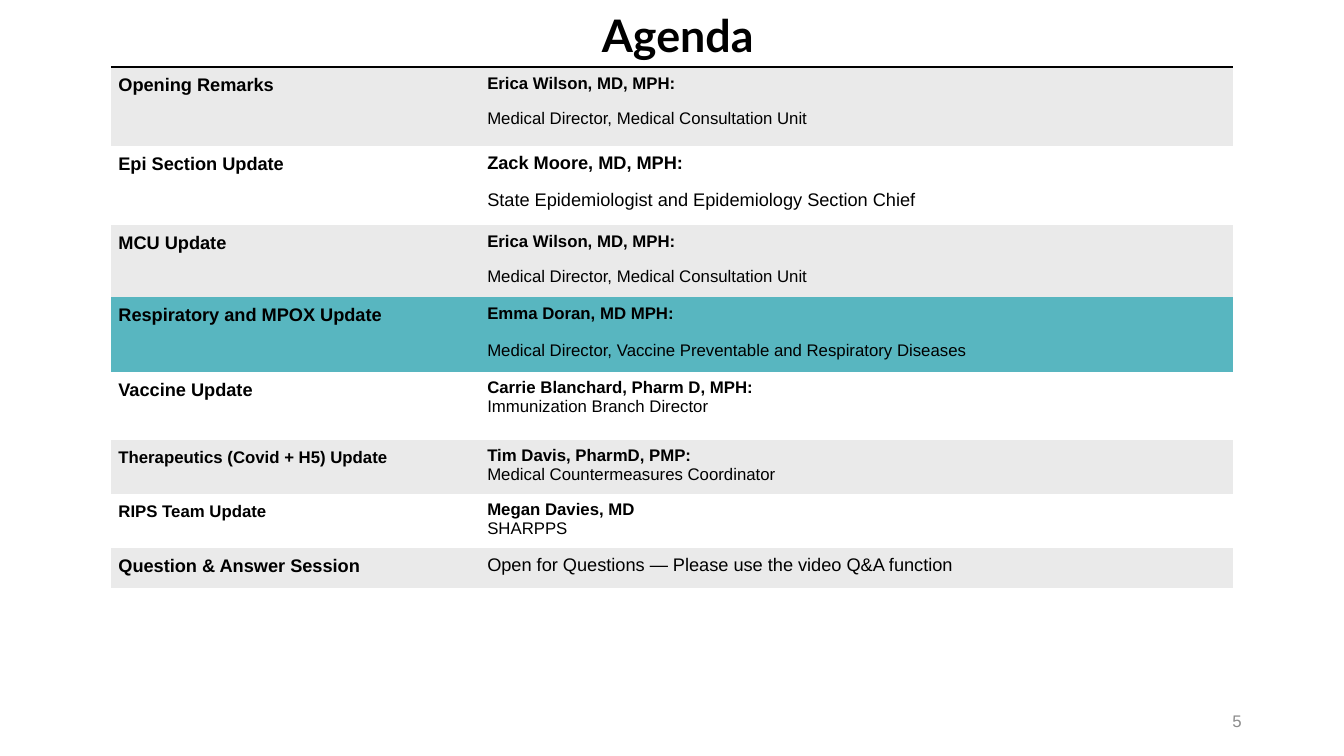
from dataclasses import dataclass

from pptx import Presentation
from pptx import util as u
from pptx.dml import color
from pptx.enum import text
from pptx.oxml import parse_xml
from pptx.oxml import ns

# Content: topic, topic size, detail lines (text, bold), detail size,
# gap between detail lines, row height, fill name
TITLE = "Agenda"
PAGE_NUMBER = "5"
AGENDA = [
    ("Opening Remarks", 13, [("Erica Wilson, MD, MPH:", True),
     ("Medical Director, Medical Consultation Unit", False)], 12, 12, 56.4, "band"),
    ("Epi Section Update", 13, [("Zack Moore, MD, MPH:", True),
     ("State Epidemiologist and Epidemiology Section Chief", False)], 13, 12, 56.4, "plain"),
    ("MCU Update", 13, [("Erica Wilson, MD, MPH:", True),
     ("Medical Director, Medical Consultation Unit", False)], 12, 12, 51.5, "band"),
    ("Respiratory and MPOX Update", 13, [("Emma Doran, MD MPH:", True),
     ("Medical Director, Vaccine Preventable and Respiratory Diseases", False)],
     12, 13.6, 53.5, "current"),
    ("Vaccine Update", 13, [("Carrie Blanchard, Pharm D, MPH:", True),
     ("Immunization Branch Director", False)], 12, 0, 48.5, "plain"),
    ("Therapeutics (Covid + H5) Update", 12, [("Tim Davis, PharmD, PMP:", True),
     ("Medical Countermeasures Coordinator", False)], 12, 0, 38.6, "band"),
    ("RIPS Team Update", 12, [("Megan Davies, MD", True),
     ("SHARPPS", False)], 12, 0, 38.6, "plain"),
    ("Question & Answer Session", 13,
     [("Open for Questions — Please use the video Q&A function", False)],
     13, 0, 28.6, "band"),
]


@dataclass(frozen=True)
class Theme:
    ink: str = "000000"
    muted: str = "8C8C8C"
    band: str = "EAEAEA"
    plain: str = "FFFFFF"
    current: str = "58B6C0"
    title_font: str = "Lato"
    body_font: str = "Arial"
    title_size: float = 32
    number_size: float = 12


THEME = Theme()
COLUMNS = (263.5, 537.9)
TABLE_LEFT, TABLE_TOP = 79.2, 47.8
CELL_INSET_SIDE, CELL_INSET = 5.4, 5
TOP_RULE = 2.25
NO_STYLE = "{2D5ABB26-0587-4C30-8999-92F81FD0307C}"


def place(shape, left, top, width, height):
    shape.left, shape.top = u.Pt(left), u.Pt(top)
    shape.width, shape.height = u.Pt(width), u.Pt(height)


def add_span(para, words, size, bold=False, font=THEME.body_font, ink=THEME.ink):
    span = para.add_run()
    span.text = words
    span.font.name, span.font.size, span.font.bold = font, u.Pt(size), bold
    span.font.color.rgb = color.RGBColor.from_string(ink)


def fill_cell(cell, lines, size, gap, fill, spacing=None):
    cell.margin_left = cell.margin_right = u.Pt(CELL_INSET_SIDE)
    cell.margin_top = cell.margin_bottom = u.Pt(CELL_INSET)
    cell.fill.solid()
    cell.fill.fore_color.rgb = color.RGBColor.from_string(fill)
    for index, (words, bold) in enumerate(lines):
        para = cell.text_frame.add_paragraph() if index else cell.text_frame.paragraphs[0]
        if index:
            para.space_before = u.Pt(gap)
        if spacing:
            para.line_spacing = spacing
        add_span(para, words, size, bold)


def rule_above(cell):
    cell._tc.get_or_add_tcPr().insert(0, parse_xml(
        f'<a:lnT {ns.nsdecls("a")} w="{u.Pt(TOP_RULE)}"><a:solidFill>'
        f'<a:srgbClr val="{THEME.ink}"/></a:solidFill></a:lnT>'))


def add_agenda(page):
    heights = [row[5] for row in AGENDA]
    frame = page.shapes.add_table(
        len(AGENDA), len(COLUMNS), u.Pt(TABLE_LEFT), u.Pt(TABLE_TOP),
        u.Pt(sum(COLUMNS)), u.Pt(sum(heights)))
    table = frame.table
    table.first_row = table.horz_banding = False
    table._tbl.tblPr.find(ns.qn("a:tableStyleId")).text = NO_STYLE
    for column, width in zip(table.columns, COLUMNS):
        column.width = u.Pt(width)
    for row, (topic, topic_size, lines, size, gap, height, fill) in zip(table.rows, AGENDA):
        row.height = u.Pt(height)
        shade = getattr(THEME, fill)
        fill_cell(row.cells[0], [(topic, True)], topic_size, 0, shade, spacing=1.07)
        fill_cell(row.cells[1], lines, size, gap, shade)
    for cell in table.rows[0].cells:
        rule_above(cell)


def main():
    deck = Presentation()
    deck.slide_width, deck.slide_height = u.Pt(960), u.Pt(540)
    page = deck.slides.add_slide(deck.slide_layouts[5])

    # Title
    title = page.shapes.title
    place(title, 422.2, 2, 124, 46)
    title.text_frame.word_wrap = False
    title.text_frame.vertical_anchor = text.MSO_ANCHOR.TOP
    para = title.text_frame.paragraphs[0]
    para.alignment = text.PP_ALIGN.CENTER
    add_span(para, TITLE, THEME.title_size, True, THEME.title_font)

    # Agenda table
    add_agenda(page)

    # Page number
    box = page.shapes.add_textbox(u.Pt(678), u.Pt(500.5), u.Pt(216), u.Pt(28.8))
    box.text_frame.word_wrap = True
    box.text_frame.vertical_anchor = text.MSO_ANCHOR.MIDDLE
    para = box.text_frame.paragraphs[0]
    para.alignment = text.PP_ALIGN.RIGHT
    add_span(para, PAGE_NUMBER, THEME.number_size, ink=THEME.muted)

    deck.save("out.pptx")


if __name__ == "__main__":
    main()
